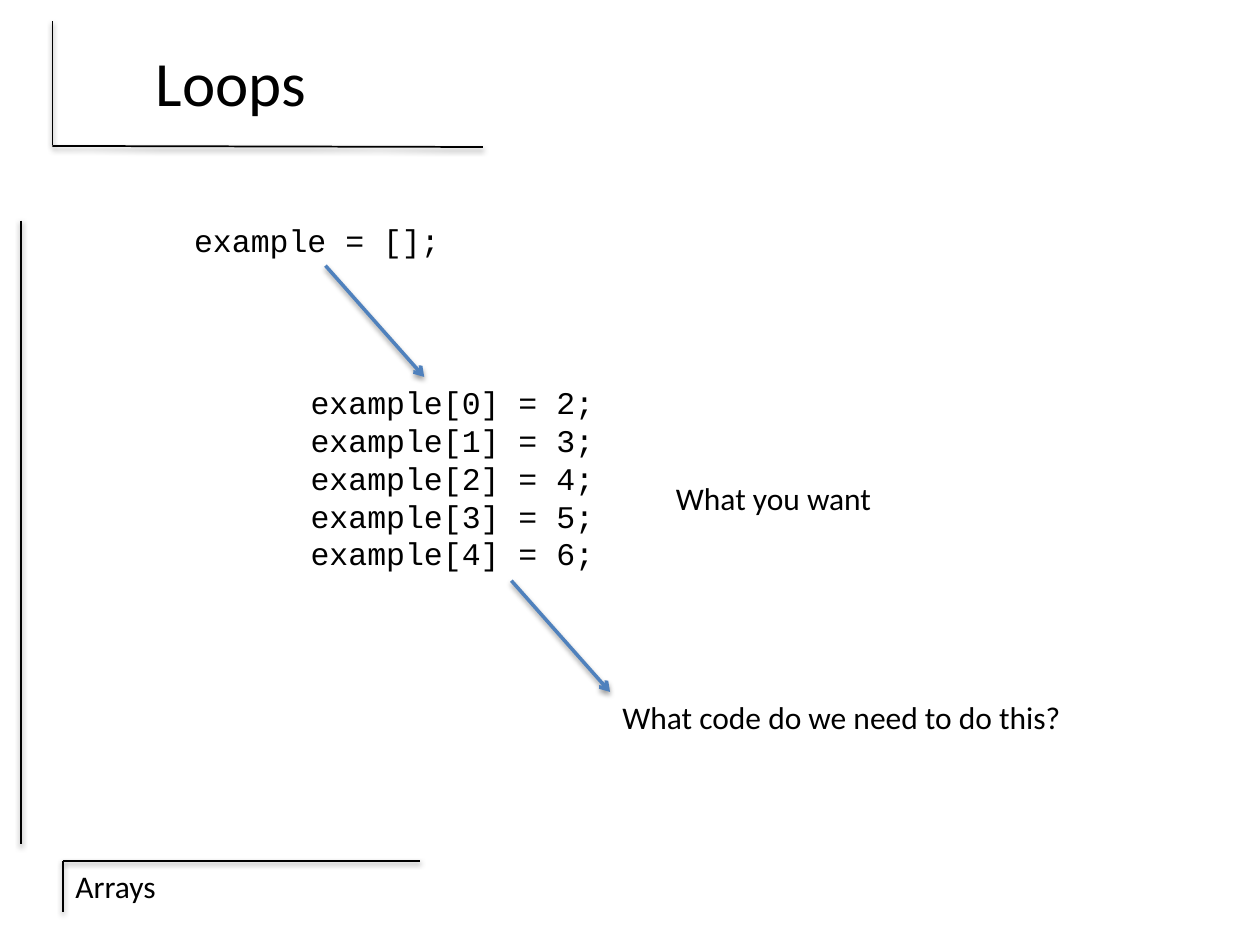
from dataclasses import dataclass

from lxml.etree import SubElement
from pptx import Presentation
from pptx.dml.color import RGBColor
from pptx.enum.shapes import MSO_CONNECTOR
from pptx.enum.text import MSO_ANCHOR, MSO_AUTO_SIZE, PP_ALIGN
from pptx.oxml.ns import qn
from pptx.util import Inches, Pt


@dataclass(frozen=True)
class Theme:
    ink: RGBColor = RGBColor(0x00, 0x00, 0x00)
    accent: RGBColor = RGBColor(0x4F, 0x81, 0xBD)
    prose: str = "Calibri"
    code: str = "Courier New"
    title_size: int = 36
    text_size: int = 18
    rule_width: int = 1
    arrow_width: int = 2


THEME = Theme()
COLUMNS, ROWS = 120, 90  # grid of twelve cells to the inch
WIDTH, HEIGHT = Inches(10), Inches(7.5)

TITLE = ("Loops", (6, 2, 32, 11.4))
FOOTER = ("Arrays", (6, 82, 29, 4.8))
ASSIGNMENTS = "\n".join(f"example[{i}] = {i + 2};" for i in range(5))

# text, font, (left, top, width, height) in grid cells
NOTES = [
    ("example = [];", THEME.code, (17.3, 20.5, 26, 4.8)),
    (ASSIGNMENTS, THEME.code, (28.4, 35.9, 29.6, 19.4)),
    ("What you want", THEME.prose, (63.2, 45, 21.2, 4.8)),
    ("What code do we need to do this?", THEME.prose, (58.1, 65.9, 44.6, 4.8)),
]

# start and end in grid cells
FRAME_RULES = [
    ((40, 82), (6, 82)),
    ((2, 21), (2, 80.4)),
    ((6, 82), (6, 86.9)),
    ((46, 14), (5, 13.9)),
    ((5, 2), (5, 13.8)),
]
ARROW_STARTS = [(31, 25.3), (48.7, 55.3)]
ARROW_STEP = (9.4, 10.6)


def x(column):
    return round(WIDTH * column / COLUMNS)


def y(row):
    return round(HEIGHT * row / ROWS)


def place(cells):
    left, top, width, height = cells
    return x(left), y(top), x(width), y(height)


def style_text(frame, font, size):
    for paragraph in frame.paragraphs:
        for run in paragraph.runs:
            run.font.name = font
            run.font.size = Pt(size)
            run.font.color.rgb = THEME.ink


def add_note(slide, text, font, cells, wrap=False):
    frame = slide.shapes.add_textbox(*place(cells)).text_frame
    frame.text = text
    frame.word_wrap = wrap
    frame.auto_size = MSO_AUTO_SIZE.SHAPE_TO_FIT_TEXT
    style_text(frame, font, THEME.text_size)


def add_line(slide, start, end, color, width, arrow=False):
    line = slide.shapes.add_connector(
        MSO_CONNECTOR.STRAIGHT, x(start[0]), y(start[1]), x(end[0]), y(end[1]))
    line.line.color.rgb = color
    line.line.width = Pt(width)
    if arrow:
        SubElement(line.line._get_or_add_ln(), qn("a:tailEnd"), type="arrow")
    add_soft_shadow(line)


def add_soft_shadow(line):
    """Give the line a faint black shadow straight below it."""
    effects = SubElement(line._element.spPr, qn("a:effectLst"))
    shadow = SubElement(effects, qn("a:outerShdw"), blurRad=str(Pt(3.1)),
                        dist=str(Pt(1.6)), dir="5400000", rotWithShape="0")
    color = SubElement(shadow, qn("a:srgbClr"), val=str(THEME.ink))
    SubElement(color, qn("a:alpha"), val="38000")


def add_title(slide, text, cells):
    title = slide.shapes.title
    title.left, title.top, title.width, title.height = place(cells)
    frame = title.text_frame
    frame.text = text
    frame.vertical_anchor = MSO_ANCHOR.MIDDLE
    frame.paragraphs[0].alignment = PP_ALIGN.CENTER
    style_text(frame, THEME.prose, THEME.title_size)


def main():
    deck = Presentation()
    deck.slide_width, deck.slide_height = WIDTH, HEIGHT
    slide = deck.slides.add_slide(deck.slide_layouts[5])

    for start, end in FRAME_RULES:
        add_line(slide, start, end, THEME.ink, THEME.rule_width)
    footer, footer_cells = FOOTER
    add_note(slide, footer, THEME.prose, footer_cells, wrap=True)
    add_title(slide, *TITLE)
    for text, font, cells in NOTES:
        add_note(slide, text, font, cells)
    for start in ARROW_STARTS:
        end = (start[0] + ARROW_STEP[0], start[1] + ARROW_STEP[1])
        add_line(slide, start, end, THEME.accent, THEME.arrow_width, arrow=True)

    deck.save("out.pptx")


if __name__ == "__main__":
    main()
